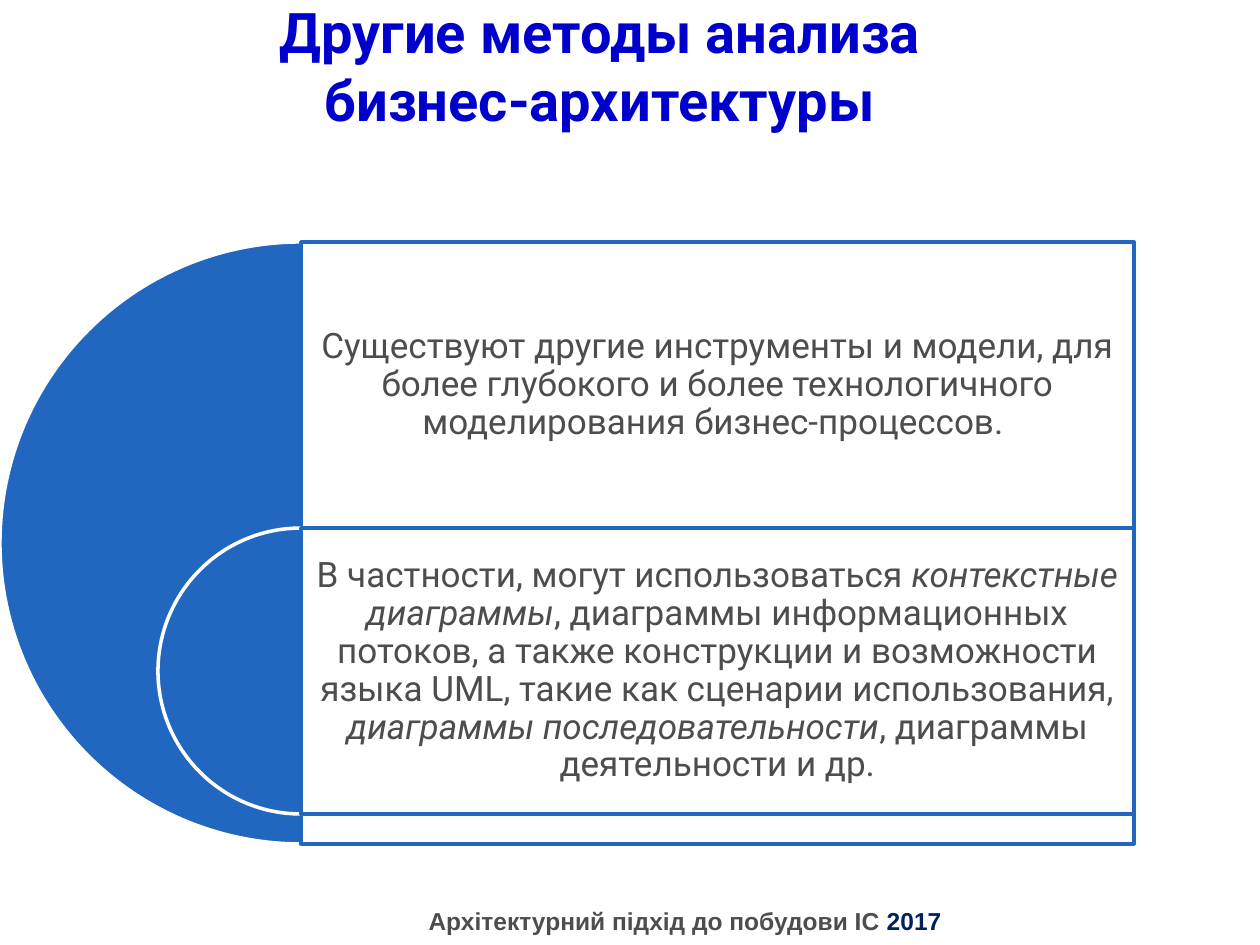
"""Build the slide on other methods of business architecture analysis."""
from dataclasses import dataclass

from lxml import etree
from pptx import Presentation
from pptx import util as u
from pptx.dml.color import RGBColor
from pptx.enum import shapes, text
from pptx.oxml import ns

PX_PER_INCH = 126


@dataclass(frozen=True)
class Theme:
    title: str = "0000CC"
    body: str = "4D4D4D"
    year: str = "002060"
    accent: str = "2167BF"
    paper: str = "FFFFFF"
    face: str = "Roboto"
    footer_face: str = "Arial"
    title_size: int = 32
    body_size: int = 20
    footer_size: int = 14
    line_width: int = 2


def px(length):
    return u.Inches(length / PX_PER_INCH)


def apply(target, values):
    for name, value in values.items():
        setattr(target, name, value)


class Painter:
    def __init__(self, page, theme):
        self.page = page
        self.theme = theme

    def shape(self, kind, place, fill, line):
        shape = self.page.shapes.add_shape(kind, *map(px, place))
        shape.shadow.inherit = False
        shape.fill.solid()
        shape.fill.fore_color.rgb = RGBColor.from_string(fill)
        shape.line.color.rgb = RGBColor.from_string(line)
        shape.line.width = u.Pt(self.theme.line_width)
        return shape

    def half_disc(self, left, top, size):
        disc = self.shape(shapes.MSO_SHAPE.PIE, (left, top, size, size),
                          self.theme.accent, self.theme.paper)
        disc.adjustments[0] = 54
        disc.adjustments[1] = 162

    def panel(self, *place):
        panel = self.shape(shapes.MSO_SHAPE.RECTANGLE, place,
                           self.theme.paper, self.theme.accent)
        colour = panel.element.spPr.find(ns.qn("a:solidFill"))[0]
        etree.SubElement(colour, ns.qn("a:alpha"), val="90000")

    def text(self, place, spans, font, margins=(13, 6), para_format=None,
             anchor=text.MSO_ANCHOR.MIDDLE):
        box = self.page.shapes.add_textbox(*map(px, place))
        side, edge = map(px, margins)
        apply(box.text_frame, {
            "word_wrap": True, "vertical_anchor": anchor,
            "margin_left": side, "margin_right": side,
            "margin_top": edge, "margin_bottom": edge})
        para = box.text_frame.paragraphs[0]
        apply(para, {"alignment": text.PP_ALIGN.CENTER, **(para_format or {})})
        for words, colour, extra in spans:
            span = para.add_run()
            span.text = words
            apply(span.font, {**font, **extra})
            span.font.color.rgb = RGBColor.from_string(colour)

    def title(self, place, words):
        font = {"name": self.theme.face, "size": u.Pt(self.theme.title_size), "bold": True}
        self.text(place, [(words, self.theme.title, {})], font)

    def statement(self, place, parts):
        font = {"name": self.theme.face, "size": u.Pt(self.theme.body_size)}
        spans = [(words, self.theme.body, {"italic": italic}) for words, italic in parts]
        self.text(place, spans, font, (10, 10),
                  {"line_spacing": 0.9, "space_after": u.Pt(7)})

    def footer(self, place, words, year):
        font = {"name": self.theme.footer_face, "size": u.Pt(self.theme.footer_size),
                "bold": True}
        self.text(place, [(words, self.theme.body, {}), (year, self.theme.year, {})],
                  font, anchor=text.MSO_ANCHOR.TOP)


def main():
    deck = Presentation()
    deck.slide_width, deck.slide_height = px(1260), px(945)
    page = deck.slides.add_slide(deck.slide_layouts[6])
    painter = Painter(page, Theme())

    painter.footer((113, 900, 1144, 43), "Архітектурний підхід до побудови ІС", " 2017")
    painter.title((213, 4, 774, 122), "Другие методы анализа бизнес-архитектуры")

    top, outer, inner, width = 242, 602, 286, 833
    centre = outer // 2
    statements = [
        [("Существуют другие инструменты и модели, для более глубокого и более "
          "технологичного моделирования бизнес-процессов. ", False)],
        [("В частности, могут использоваться ", False),
         ("контекстные диаграммы", True),
         (", диаграммы информационных потоков, а также конструкции и возможности "
          "языка UML, такие как сценарии использования, ", False),
         ("диаграммы последовательности", True),
         (", диаграммы деятельности и др.", False)],
    ]
    for index, (size, parts) in enumerate(zip((outer, inner), statements)):
        level = top + index * inner
        painter.half_disc(centre - size // 2, level, size)
        painter.panel(centre, level, width, size)
        painter.statement((centre, level, width, inner), parts)

    deck.save("out.pptx")


if __name__ == "__main__":
    main()
